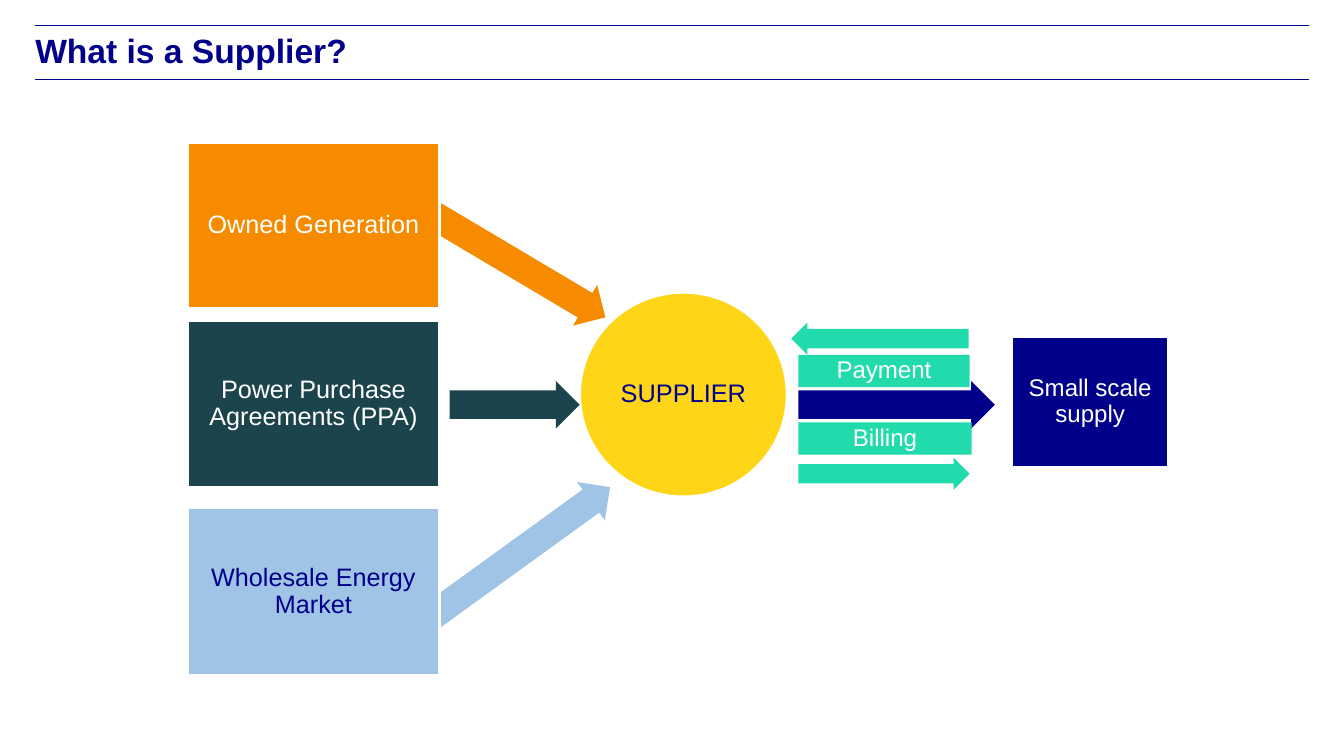
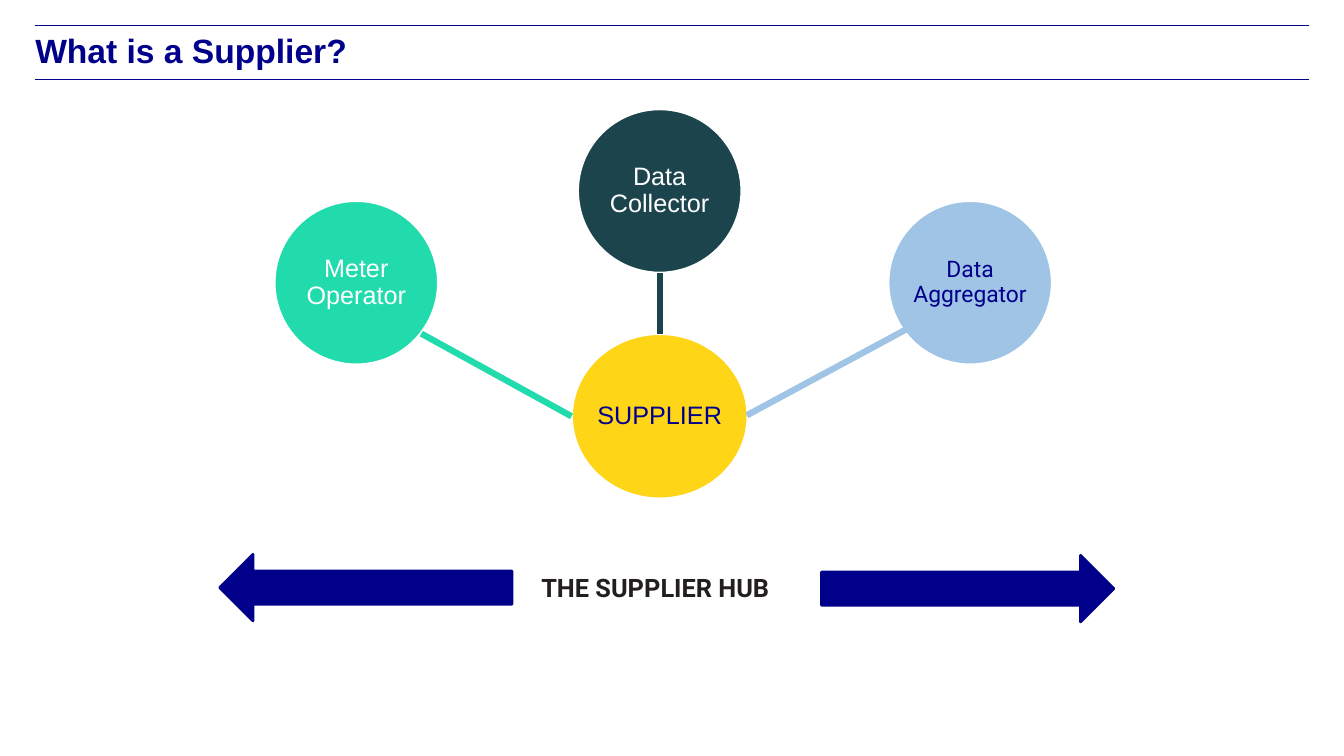
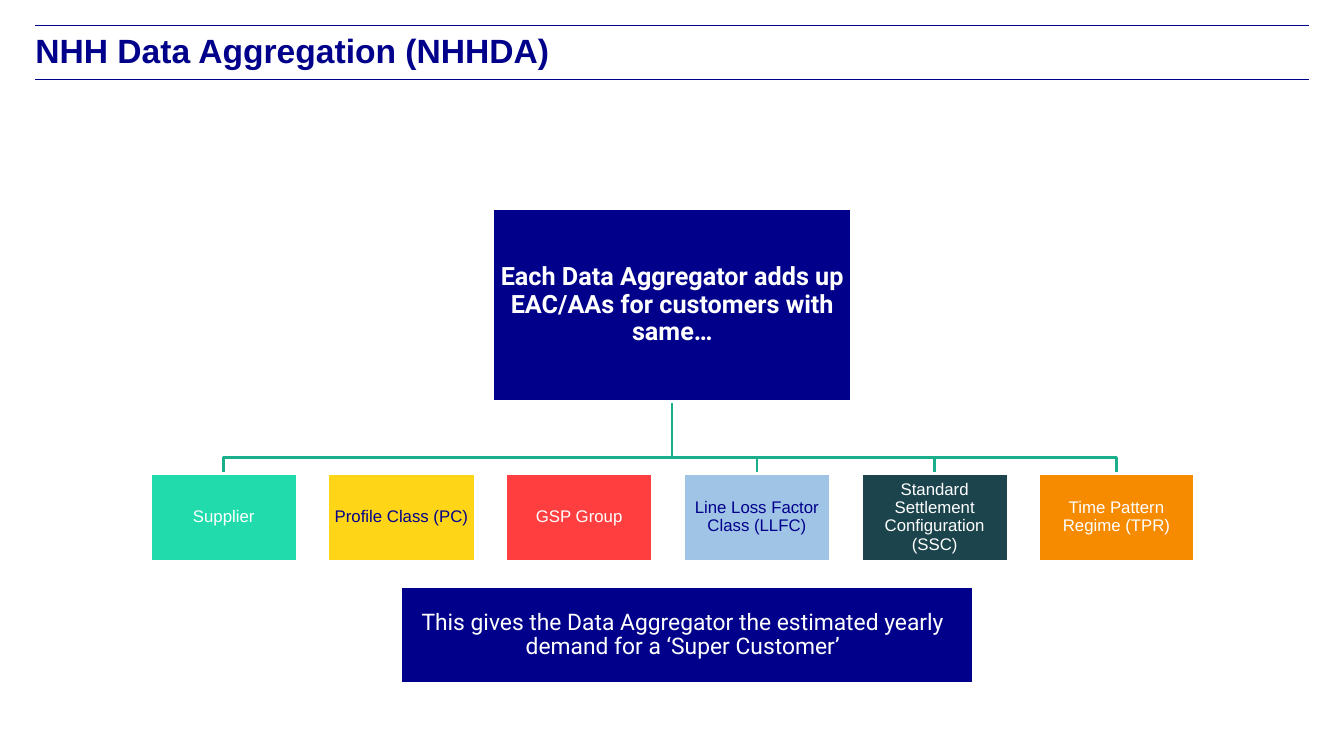
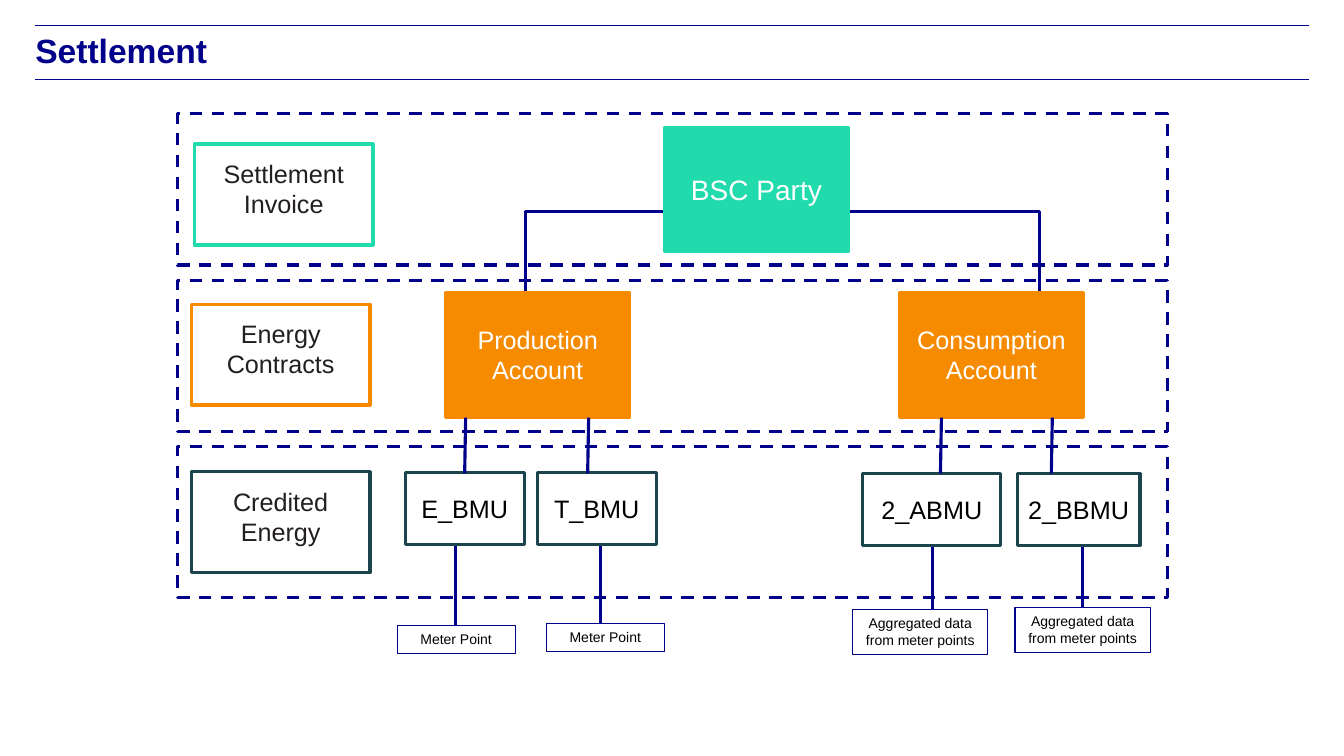
from lxml import etree
from pptx import Presentation, util as u
from pptx.dml.color import RGBColor
from pptx.enum import dml, shapes, text
from pptx.oxml.ns import qn

COLUMNS, ROWS = 40, 22.5
CELL = u.Inches(7.5) / ROWS
NAVY, TEAL, SLATE, SKY = "00008B", "21DBAD", "1C444C", "A0C4E5"
YELLOW, ORANGE, RED, GREEN = "FFD518", "F68B00", "FF3F3F", "1AAF8B"
WHITE, BLACK, INK = "FFFFFF", "000000", "231F20"
RECT, OVAL = shapes.MSO_SHAPE.RECTANGLE, shapes.MSO_SHAPE.OVAL
LEFT, RIGHT = shapes.MSO_SHAPE.LEFT_ARROW, shapes.MSO_SHAPE.RIGHT_ARROW
TITLE_AREA = (1.05, 0.9, 37.92, 1.47)
RULE_ROWS = (0.75, 2.37)


def grid(*cells):
    return [u.Emu(round(c * CELL)) for c in cells]


def rgb(value):
    return RGBColor.from_string(value)


def paint(sp, fill=None, line=None, width=2):
    sp.shadow.inherit = False
    if fill:
        sp.fill.solid()
        sp.fill.fore_color.rgb = rgb(fill)
    else:
        sp.fill.background()
    if line:
        sp.line.color.rgb = rgb(line)
        sp.line.width = u.Pt(width)
    else:
        sp.line.fill.background()


def write(sp, words, size, color, font="Arial", bold=False, spacing=None,
          align=text.PP_ALIGN.CENTER, anchor=text.MSO_ANCHOR.MIDDLE, insets=None):
    tf = sp.text_frame
    tf.word_wrap = True
    tf.auto_size = text.MSO_AUTO_SIZE.NONE
    tf.vertical_anchor = anchor
    if insets:
        tf.margin_left, tf.margin_top, tf.margin_right, tf.margin_bottom = grid(*insets)
    tf.text = words
    p = tf.paragraphs[0]
    p.alignment = align
    p.line_spacing = spacing
    p.font.name, p.font.size, p.font.bold = font, u.Pt(size), bold
    p.font.color.rgb = rgb(color)


def box(s, area, fill=None, line=None, width=2, kind=RECT):
    sp = s.shapes.add_shape(kind, *grid(*area))
    paint(sp, fill, line, width)
    return sp


def tile(s, area, words, fill, color=WHITE, size=18, inset=0.21, line=WHITE,
         kind=RECT, **style):
    sp = box(s, area, fill, line, kind=kind)
    write(sp, words, size, color, spacing=0.9, insets=[inset] * 4, **style)


def arrow(s, area, fill, kind=RIGHT, turn=0, shaft=0.6, line=None):
    sp = box(s, area, fill, line, kind=kind)
    sp.adjustments[0], sp.adjustments[1] = shaft, 0.5
    sp.rotation = turn


def link(s, start, end, color=NAVY, width=2.25):
    c = s.shapes.add_connector(shapes.MSO_CONNECTOR.STRAIGHT, *grid(*start, *end))
    c.line.color.rgb = rgb(color)
    c.line.width = u.Pt(width)
    etree.SubElement(c.element.spPr, qn("a:effectLst"))
    return c


def polyline(s, points, color=NAVY, width=2.25):
    points = [grid(*point) for point in points]
    builder = s.shapes.build_freeform(*points[0])
    builder.add_line_segments(points[1:], close=False)
    paint(builder.convert_to_shape(), line=color, width=width)


def add_rules(layout, s):
    left, _, width, _ = TITLE_AREA
    for row in RULE_ROWS:
        rule = link(s, (left, row), (left + width, row), width=0.5)
        layout.shapes.element.append(rule.element)


def titled_slide(prs, title):
    s = prs.slides.add_slide(prs.slide_layouts[5])
    sp = s.shapes.title
    sp.left, sp.top, sp.width, sp.height = grid(*TITLE_AREA)
    write(sp, title, 24, NAVY, bold=True, align=text.PP_ALIGN.LEFT,
          anchor=text.MSO_ANCHOR.TOP, insets=[0] * 4)
    return s


def supply_chain(s):
    arrow(s, (23.76, 11.34, 5.85, 1.41), NAVY)
    tile(s, (17.25, 8.7, 6.18, 6.09), "SUPPLIER", YELLOW, NAVY, 18.1, 0, kind=OVAL)
    sources = [
        ("Owned Generation", 4.23, 4.95, ORANGE, WHITE, (12.3, 7.17, 6.15), 30.7),
        ("Power Purchase Agreements (PPA)", 9.54, 4.98, SLATE, WHITE,
         (13.38, 11.34, 3.87), 0),
        ("Wholesale Energy Market", 15.12, 4.98, SKY, NAVY, (11.94, 15.81, 6.87), 324.1),
    ]
    for words, top, height, fill, color, flow, turn in sources:
        arrow(s, (*flow, 1.41), fill, turn=turn)
        tile(s, (5.58, top, 7.5, height), words, fill, color)
    tile(s, (30.12, 10.02, 4.65, 3.9), "Small scale supply", NAVY, size=17.2)
    arrow(s, (23.55, 9.6, 5.28, 0.96), TEAL, LEFT)
    arrow(s, (23.76, 13.62, 5.1, 0.96), TEAL)
    for words, top, width in [("Payment", 10.56, 5.1), ("Billing", 12.57, 5.16)]:
        tile(s, (23.76, top, width, 0.96), words, TEAL, size=17.2, inset=0.12, line=None)


def supplier_hub(s):
    tile(s, (17.01, 9.93, 5.25, 4.92), "SUPPLIER", YELLOW, NAVY, inset=0, kind=OVAL)
    agents = [
        ("Meter Operator", 8.16, 5.97, TEAL, WHITE, 18, "Arial"),
        ("Data Collector", 17.19, 3.24, SLATE, WHITE, 18, "Arial"),
        ("Data Aggregator", 26.43, 5.97, SKY, NAVY, 16.3, "Roboto"),
    ]
    for words, left, top, fill, color, size, font in agents:
        tile(s, (left, top, 4.89, 4.89), words, fill, color, size, 0, kind=OVAL, font=font)
    link(s, (12.54, 9.93), (17.01, 12.39), TEAL, 4.5)
    link(s, (22.23, 12.36), (27.18, 9.69), SKY, 4.5)
    link(s, (19.65, 9.93), (19.65, 8.13), SLATE, 4.5)
    for left, top, kind in [(24.45, 16.53, RIGHT), (6.54, 16.5, LEFT)]:
        arrow(s, (left, top, 8.7, 1.98), NAVY, kind, shaft=0.5, line=NAVY)
    caption = s.shapes.add_textbox(*grid(16.11, 17.13, 7.95, 0.81))
    write(caption, "THE SUPPLIER HUB", 18.1, INK, "Roboto", True, u.Pt(19.1),
          text.PP_ALIGN.LEFT, text.MSO_ANCHOR.TOP, [0] * 4)


def aggregation(s):
    criteria = [
        ("Supplier", TEAL, WHITE),
        ("Profile Class (PC)", YELLOW, NAVY),
        ("GSP Group", RED, WHITE),
        ("Line Loss Factor Class (LLFC)", SKY, NAVY),
        ("Standard Settlement Configuration (SSC)", SLATE, WHITE),
        ("Time Pattern Regime (TPR)", ORANGE, WHITE),
    ]
    middle, trunk, bar, top = COLUMNS / 2, 11.94, 13.62, 14.1
    for center in (33.24, 27.81, 22.53, 6.66):
        polyline(s, [(middle, trunk), (middle, bar), (center, bar), (center, top)], GREEN, 2)
    tile(s, (14.67, 6.21, 10.68, 5.73),
         "Each Data Aggregator adds up EAC/AAs for customers with same…",
         NAVY, inset=0.03, font="Roboto", bold=True)
    for i, (words, fill, color) in enumerate(criteria):
        width = 4.62 if i == len(criteria) - 1 else 4.38
        tile(s, (4.47 + 5.29 * i, top, width, 2.6), words, fill, color, 12, 0.03)
    note = box(s, (11.91, 17.46, 17.07, 2.88), NAVY, WHITE)
    write(note, "This gives the Data Aggregator the estimated yearly demand for a ‘Super Customer’",
          16.3, WHITE, "Roboto", spacing=0.9, insets=[0.03, 0.03, 0.27, 0.03])


def settlement(s):
    for x in (13.56, 17.88, 27.75, 32.22):
        link(s, (x, 16.2), (x, 18.72))
    polyline(s, [(15.63, 9.57), (15.63, 6.3), (30.93, 6.3), (30.93, 9.57)])

    labels = [
        ("Settlement Invoice", 5.79, 4.29, TEAL),
        ("Energy Contracts", 5.7, 9.06, ORANGE),
        ("Credited Energy", 5.7, 14.04, SLATE),
    ]
    for i in range(len(labels)):
        band = box(s, (5.28, 3.39 + 4.95 * i, 29.46, 4.5), line=NAVY, width=2.25)
        band.line.dash_style = dml.MSO_LINE.DASH
    for words, left, top, line in labels:
        sp = box(s, (left, top, 5.31, 3), WHITE, line, 2.5)
        write(sp, words, 18, INK, anchor=text.MSO_ANCHOR.TOP, insets=[0, 0.42, 0, 0])

    accounts = [
        ("BSC Party", 19.77, 3.78, TEAL, 20),
        ("Production Account", 13.26, 8.7, ORANGE, 18),
        ("Consumption Account", 26.76, 8.7, ORANGE, 18),
    ]
    for words, left, top, fill, size in accounts:
        write(box(s, (left, top, 5.49, 3.72), fill, fill), words, size, WHITE)

    units = [
        ("E_BMU", 12.06, 14.07, 3.54),
        ("T_BMU", 15.99, 14.07, 3.54),
        ("2_ABMU", 25.68, 14.1, 4.11),
        ("2_BBMU", 30.27, 14.1, 3.66),
    ]
    for words, left, top, width in units:
        write(box(s, (left, top, width, 2.13), line=SLATE, width=2.25), words, 18, BLACK)

    aggregated, single = "Aggregated data from meter points", "Meter Point"
    meters = [
        (aggregated, 25.38, 18.15, 4.02, 1.32),
        (aggregated, 30.21, 18.09, 4.02, 1.32),
        (single, 16.26, 18.57, 3.51, 0.81),
        (single, 11.82, 18.63, 3.51, 0.81),
    ]
    for words, *area in meters:
        write(box(s, area, WHITE, NAVY, 0.75), words, 10, BLACK,
              anchor=text.MSO_ANCHOR.TOP)
    for x in (13.86, 17.52, 31.32, 28.02):
        link(s, (x, 12.43), (x - 0.03, 14.09))


def main():
    prs = Presentation()
    prs.slide_width, prs.slide_height = grid(COLUMNS, ROWS)
    pages = [
        ("What is a Supplier?", supply_chain),
        ("What is a Supplier?", supplier_hub),
        ("NHH Data Aggregation (NHHDA)", aggregation),
        ("Settlement", settlement),
    ]
    for title, draw in pages:
        draw(titled_slide(prs, title))
    add_rules(prs.slide_layouts[5], prs.slides[0])
    prs.save("out.pptx")


if __name__ == "__main__":
    main()
